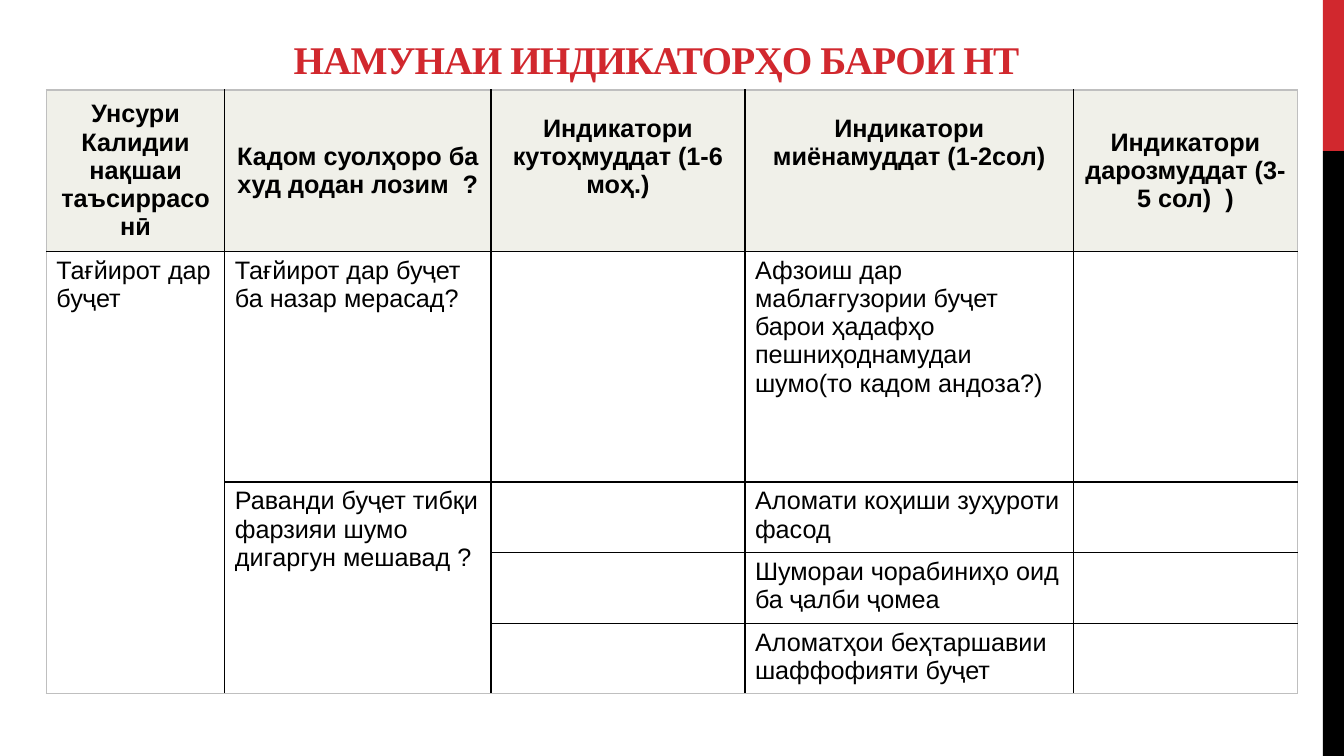
from lxml import etree
from pptx import Presentation
from pptx.dml.color import RGBColor
from pptx.enum.shapes import MSO_SHAPE
from pptx.enum.text import MSO_ANCHOR, PP_ALIGN
from pptx.oxml.ns import qn
from pptx.util import Inches, Pt

RECTANGLE = MSO_SHAPE.RECTANGLE
TOP, MIDDLE, BOTTOM = MSO_ANCHOR.TOP, MSO_ANCHOR.MIDDLE, MSO_ANCHOR.BOTTOM
LEFT, CENTER = PP_ALIGN.LEFT, PP_ALIGN.CENTER

RED, BLACK, WHITE = "D1282E", "000000", "FFFFFF"
HEADER_FILL, OUTER_LINE = "F0F0E9", "BFBFBF"
TITLE_FONT = dict(name="Times New Roman", size=Pt(28), bold=True)
HEADER_FONT = dict(name="Arial", size=Pt(18), bold=True)
BODY_FONT = HEADER_FONT | dict(bold=False)

# Table content: each header with the number of lines it is raised by
HEADERS = [
    ("Унсури Калидии нақшаи таъсиррасонӣ", 0),
    ("Кадом суолҳоро ба худ додан лозим  ?", 0),
    ("Индикатори кутоҳмуддат (1-6 моҳ.)", 1),
    ("Индикатори миёнамуддат (1-2сол)", 2),
    ("Индикатори дарозмуддат (3-5 сол)  )", 0),
]
INDICATORS = [
    ["Тағйирот дар буҷет", "Тағйирот дар буҷет\nба назар мерасад?", "",
     "Афзоиш дар маблағгузории буҷет барои ҳадафҳо пешниҳоднамудаи "
     "шумо(то кадом андоза?)", ""],
    ["", "Раванди буҷет тибқи фарзияи шумо дигаргун мешавад ?", "",
     "Аломати коҳиши зуҳуроти фасод", ""],
    ["", "", "", "Шумораи чорабиниҳо оид ба ҷалби ҷомеа", ""],
    ["", "", "", "Аломатҳои беҳтаршавии шаффофияти буҷет", ""],
]
MERGES = [((1, 0), (4, 0)), ((2, 1), (4, 1))]
COLUMN_SHARES = [13.28, 19.8, 18.9, 24.45, 16.65]
ROW_SHARES = [20, 30.53, 8.8, 8.8, 8.8]
HEADER_LINE = Inches(0.28)


def color(hex_code):
    return RGBColor.from_string(hex_code)


class SlideBuilder:
    """Places elements by percentages of the slide's width and height."""

    def __init__(self, deck):
        self.deck = deck
        self.slide = deck.slides.add_slide(deck.slide_layouts[6])

    def x(self, share):
        return round(self.deck.slide_width * share / 100)

    def y(self, share):
        return round(self.deck.slide_height * share / 100)

    def box(self, left, top, width, height):
        return self.x(left), self.y(top), self.x(width), self.y(height)

    def set_text(self, frame, text, font, align=LEFT, hex_code=BLACK):
        frame.word_wrap = True
        frame.text = text
        for paragraph in frame.paragraphs:
            paragraph.alignment = align
            for key, value in font.items():
                setattr(paragraph.font, key, value)
                for run in paragraph.runs:
                    setattr(run.font, key, value)
            for run in paragraph.runs:
                run.font.color.rgb = color(hex_code)

    def bar(self, area, hex_code):
        bar = self.slide.shapes.add_shape(RECTANGLE, *self.box(*area))
        bar.shadow.inherit = False
        bar.fill.solid()
        bar.fill.fore_color.rgb = color(hex_code)
        bar.line.fill.background()

    def title(self, area, text):
        frame = self.slide.shapes.add_textbox(*self.box(*area)).text_frame
        self.set_text(frame, text, TITLE_FONT, CENTER, RED)
        frame.vertical_anchor = BOTTOM
        frame.margin_right = Inches(0.38)
        for run in frame.paragraphs[0].runs:
            run._r.get_or_add_rPr().set("spc", "-60")

    def border(self, cell, side, hex_code):
        line = etree.SubElement(cell._tc.get_or_add_tcPr(), qn(f"a:ln{side}"), w=str(Pt(1)))
        fill = etree.SubElement(line, qn("a:solidFill"))
        etree.SubElement(fill, qn("a:srgbClr"), val=hex_code)

    def borders(self, cell, row, column):
        last_row = row + (cell.span_height if cell.is_merge_origin else 1) == len(ROW_SHARES)
        on_edge = {"L": column == 0, "R": column == len(COLUMN_SHARES) - 1,
                   "T": row == 0, "B": last_row}
        for side, outer in on_edge.items():
            inside_merge = cell.is_spanned and side in "TB" and not outer
            if not inside_merge:
                self.border(cell, side, OUTER_LINE if outer else BLACK)

    def fill_cell(self, cell, row, column, hex_code, anchor):
        self.borders(cell, row, column)
        cell.fill.solid()
        cell.fill.fore_color.rgb = color(hex_code)
        cell.vertical_anchor = anchor

    def table(self, left, top):
        area = self.box(left, top, sum(COLUMN_SHARES), sum(ROW_SHARES))
        table = self.slide.shapes.add_table(len(ROW_SHARES), len(COLUMN_SHARES), *area).table
        for column, share in zip(table.columns, COLUMN_SHARES):
            column.width = self.x(share)
        for row, share in zip(table.rows, ROW_SHARES):
            row.height = self.y(share)
        for first, last in MERGES:
            table.cell(*first).merge(table.cell(*last))

        # Header row
        for column, (text, raised) in enumerate(HEADERS):
            cell = table.cell(0, column)
            self.fill_cell(cell, 0, column, HEADER_FILL, MIDDLE)
            self.set_text(cell.text_frame, text, HEADER_FONT, CENTER)
            cell.margin_bottom = Inches(0.05) + raised * HEADER_LINE

        # Indicator rows
        for row, texts in enumerate(INDICATORS, 1):
            for column, text in enumerate(texts):
                cell = table.cell(row, column)
                self.fill_cell(cell, row, column, WHITE, TOP)
                self.set_text(cell.text_frame, text, BODY_FONT)


def main():
    deck = Presentation()
    deck.slide_width, deck.slide_height = Inches(13.33), Inches(7.5)
    builder = SlideBuilder(deck)

    # Side bars
    builder.bar((98.42, 0, 1.58, 20), RED)
    builder.bar((98.42, 20, 1.58, 80), BLACK)

    # Title and indicator table
    builder.title((4.73, 2, 90.32, 9.6), "НАМУНАИ ИНДИКАТОРҲО БАРОИ НТ")
    builder.table(3.45, 11.9)
    deck.save("out.pptx")


if __name__ == "__main__":
    main()
